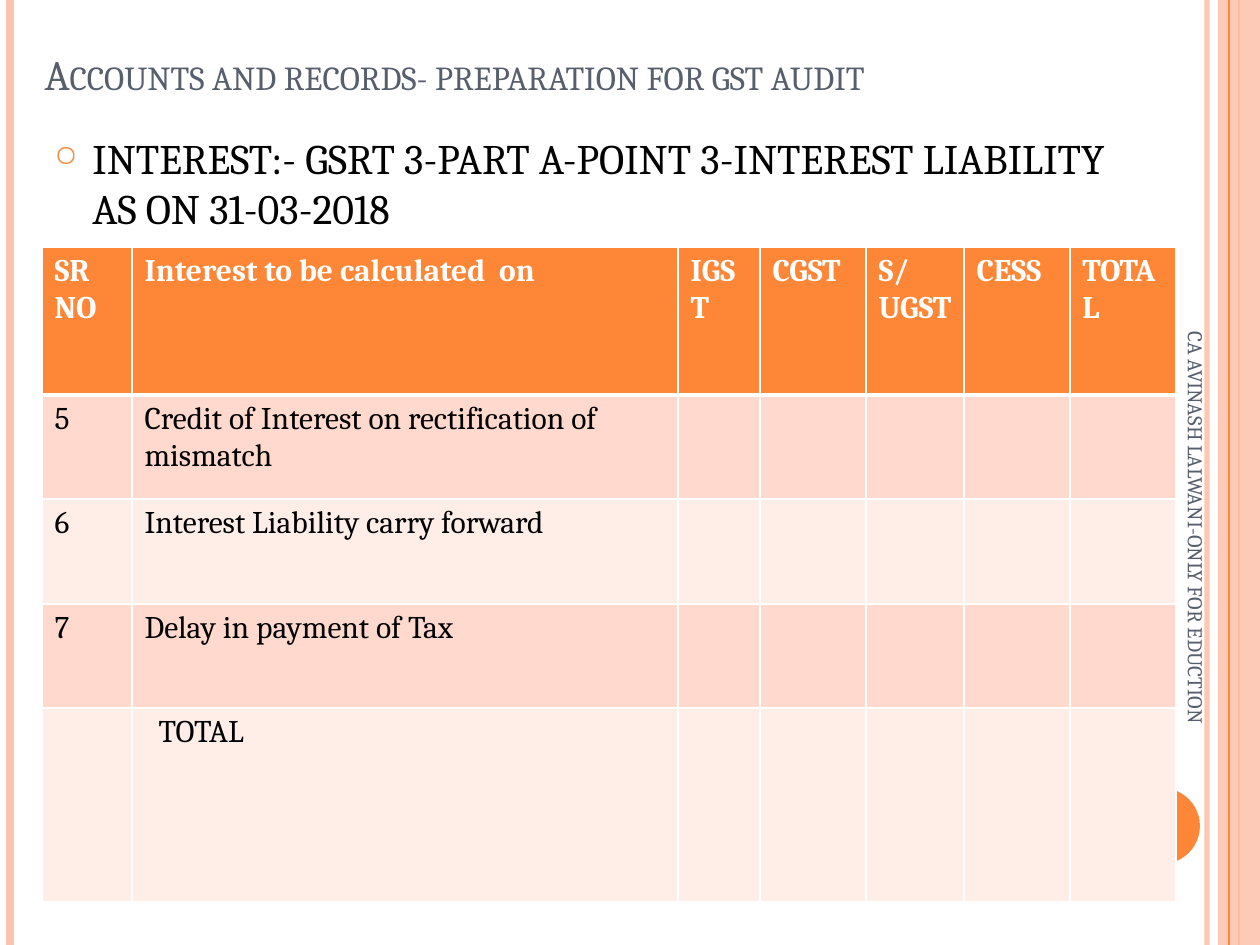
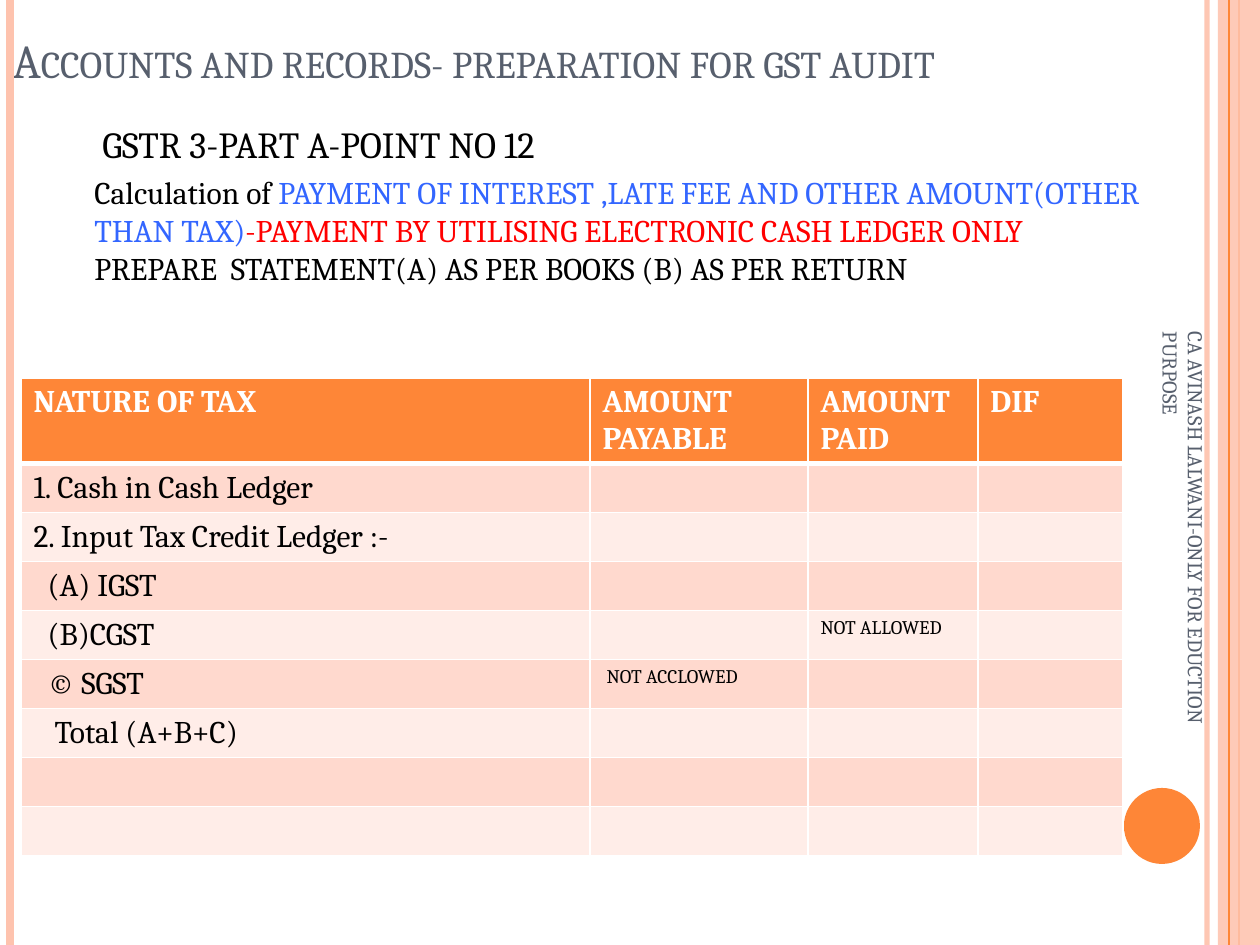
from dataclasses import dataclass

from lxml.etree import SubElement
from pptx import Presentation
from pptx.dml.color import RGBColor
from pptx.enum.shapes import MSO_CONNECTOR, MSO_SHAPE
from pptx.enum.text import MSO_ANCHOR, MSO_AUTO_SIZE, PP_ALIGN
from pptx.oxml.ns import qn
from pptx.util import Emu, Pt

PX_PER_INCH = 126
SLIDE_WIDTH, SLIDE_HEIGHT = 1260, 945


@dataclass(frozen=True)
class Theme:
    font: str = "Cambria"
    accent: str = "FE8637"
    peach: str = "FEC3AE"
    slate: str = "575F6D"
    white: str = "FFFFFF"
    black: str = "000000"
    blue: str = "3366FF"
    red: str = "FF0000"
    bands: tuple = ("FFD9CE", "FFEDE8")
    lead: int = 24
    heading: int = 21
    text: int = 18
    footer: int = 12
    note: int = 11


@dataclass(frozen=True)
class Entry:
    text: str = ""
    indent: int = 0
    size: int = Theme.text


THEME = Theme()
TITLE = "Accounts and records- preparation for gst audit"
FOOTER = "CA AVINASH LALWANI-ONLY FOR EDUCTION PURPOSE"


def px(length):
    return Emu(round(length * 914400 / PX_PER_INCH))


def box(*lengths):
    return [px(length) for length in lengths]


def apply(target, **values):
    for attribute, value in values.items():
        setattr(target, attribute, value)


def style(run, size, color, bold=False):
    apply(run.font, name=THEME.font, size=Pt(size), bold=bold)
    run.font.color.rgb = RGBColor.from_string(color)


def add_run(paragraph, text, size, color, bold=False):
    run = paragraph.add_run()
    run.text = text
    style(run, size, color, bold)
    return run


def set_alpha(element, percent):
    SubElement(next(element.iter(qn("a:srgbClr"))), qn("a:alpha"), val=str(percent * 1000))


def add_rule(slide, x, color, width, alpha=None):
    rule = slide.shapes.add_connector(
        MSO_CONNECTOR.STRAIGHT, *box(x, 0, x, SLIDE_HEIGHT))
    rule.line.color.rgb = RGBColor.from_string(color)
    rule.line.width = Pt(width)
    properties = rule._element.spPr
    if alpha:
        set_alpha(properties, alpha)
    SubElement(properties, qn("a:effectLst"))


def add_block(slide, kind, bounds, color, alpha=None):
    block = slide.shapes.add_shape(kind, *box(*bounds))
    block.shadow.inherit = False
    block.fill.solid()
    block.fill.fore_color.rgb = RGBColor.from_string(color)
    block.line.fill.background()
    if alpha:
        set_alpha(block._element.spPr, alpha)


def add_text(slide, bounds, **frame_format):
    holder = slide.shapes.add_textbox(*box(*bounds))
    apply(holder.text_frame, word_wrap=True, auto_size=MSO_AUTO_SIZE.NONE, **frame_format)
    return holder


def set_indent(paragraph, left, first=0):
    properties = paragraph._p.get_or_add_pPr()
    for name, length in {"marL": left, "indent": first}.items():
        properties.set(name, str(px(length)))


def add_bullet(paragraph, character, color, percent):
    properties = paragraph._p.get_or_add_pPr()
    SubElement(SubElement(properties, qn("a:buClr")), qn("a:srgbClr"), val=color)
    SubElement(properties, qn("a:buSzPct"), val=str(percent * 1000))
    SubElement(properties, qn("a:buChar"), char=character)


def set_title(slide, bounds, size):
    title = slide.shapes.title
    apply(title, **dict(zip(("left", "top", "width", "height"), box(*bounds))))
    apply(title.text_frame, word_wrap=True, auto_size=MSO_AUTO_SIZE.NONE,
          vertical_anchor=MSO_ANCHOR.BOTTOM)
    heading = title.text_frame.paragraphs[0]
    heading.alignment = PP_ALIGN.LEFT
    run = add_run(heading, TITLE, size, THEME.slate)
    run._r.get_or_add_rPr().set("cap", "small")


def add_framed_slide(deck, title_bounds, title_size):
    slide = deck.slides.add_slide(deck.slide_layouts[5])
    add_rule(slide, 1207, THEME.peach, 3, 93)
    add_rule(slide, 10, THEME.peach, 4.5)
    add_rule(slide, 1239, THEME.accent, 1.5)
    add_block(slide, MSO_SHAPE.RECTANGLE, (1218, 0, 42, SLIDE_HEIGHT), THEME.peach, 87)
    add_rule(slide, 1229, THEME.accent, 0.75)
    add_block(slide, MSO_SHAPE.OVAL, (1124, 788, 76, 76), THEME.accent)
    set_title(slide, title_bounds, title_size)
    footer = add_text(slide, (963, 515, 441, 50), vertical_anchor=MSO_ANCHOR.MIDDLE)
    footer.rotation = 90
    add_run(footer.text_frame.paragraphs[0], FOOTER, THEME.footer, THEME.slate)
    return slide


def set_borders(cell, widths):
    properties = cell._tc.get_or_add_tcPr()
    for side, width in widths.items():
        border = SubElement(properties, qn(f"a:ln{side}"), w=str(Pt(width)))
        SubElement(SubElement(border, qn("a:solidFill")), qn("a:srgbClr"), val=THEME.white)


def fill_cell(cell, entry, row):
    header = row == 0
    set_borders(cell, {"L": 1, "R": 1, "T": 3 if row == 1 else 1, "B": 3 if header else 1})
    cell.fill.solid()
    cell.fill.fore_color.rgb = RGBColor.from_string(
        THEME.accent if header else THEME.bands[(row - 1) % 2])
    cell.text = entry.text
    for paragraph in cell.text_frame.paragraphs:
        if entry.indent:
            set_indent(paragraph, entry.indent)
        for run in paragraph.runs:
            style(run, entry.size, THEME.white if header else THEME.black, header)
        if not entry.text:
            ending = SubElement(paragraph._p, qn("a:endParaRPr"), sz=str(entry.size * 100))
            SubElement(ending, qn("a:latin"), typeface=THEME.font)


def add_grid(slide, left, top, widths, heights, rows):
    frame = slide.shapes.add_table(
        len(heights), len(widths), *box(left, top, sum(widths), sum(heights)))
    grid = frame.table
    for column, width in zip(grid.columns, widths):
        column.width = px(width)
    for line, height in zip(grid.rows, heights):
        line.height = px(height)
    for r in range(len(heights)):
        for c in range(len(widths)):
            entry = rows[r][c] if c < len(rows[r]) else Entry()
            fill_cell(grid.cell(r, c), entry if isinstance(entry, Entry) else Entry(entry), r)


def build_interest_slide(deck):
    slide = add_framed_slide(deck, (32, 38, 1166, 67), THEME.lead)
    point = add_text(slide, (42, 126, 1102, 766)).text_frame.paragraphs[0]
    point.space_before = Pt(6)
    set_indent(point, 38, -38)
    add_bullet(point, "○", THEME.accent, 70)
    add_run(point, "INTEREST:- GSRT 3-PART A-POINT 3-INTEREST LIABILITY AS ON 31-03-2018",
            THEME.lead, THEME.black)
    add_grid(slide, 42, 247, [90, 546, 82, 106, 98, 106, 106], [148, 104, 105, 104, 194], [
        ["SR\nNO", "Interest to be calculated  on", "IGST", "CGST", "S/UGST", "CESS", "TOTAL"],
        ["5", "Credit of Interest on rectification of mismatch"],
        ["6", "Interest Liability carry forward"],
        ["7", "Delay in payment of Tax"],
        ["", Entry("TOTAL", 14)],
    ])


def build_payment_slide(deck):
    slide = add_framed_slide(deck, (0, 0, 1228, 94), 27)
    body = add_text(slide, (32, 116, 1144, 809)).text_frame
    reference, calculation = body.paragraphs[0], body.add_paragraph()
    for paragraph, left in ((reference, 58), (calculation, 50)):
        paragraph.space_before = Pt(4)
        set_indent(paragraph, left)
    add_run(reference, "GSTR 3-PART A-POINT NO 12", THEME.heading, THEME.black)
    for text, color in (
        ("Calculation of ", THEME.black),
        ("PAYMENT OF INTEREST ,LATE FEE AND OTHER AMOUNT(OTHER THAN TAX)", THEME.blue),
        ("-PAYMENT BY UTILISING ELECTRONIC CASH LEDGER ONLY", THEME.red),
    ):
        add_run(calculation, text, THEME.text, color)
    calculation.add_line_break()
    add_run(calculation, "PREPARE  STATEMENT(A) AS PER BOOKS (B) AS PER RETURN",
            THEME.text, THEME.black)
    add_grid(slide, 21, 378, [569, 218, 170, 145], [84] + [49] * 8, [
        ["NATURE OF TAX", "AMOUNT PAYABLE", "AMOUNT PAID", "DIF"],
        ["1. Cash in Cash Ledger"],
        ["2. Input Tax Credit Ledger :-"],
        [Entry("(A) IGST", 14)],
        [Entry("(B)CGST", 14), "", Entry("NOT ALLOWED", size=THEME.note)],
        [Entry("© SGST", 14), Entry("NOT ACCLOWED", 4, THEME.note)],
        [Entry("Total (A+B+C)", 21)],
        [],
        [],
    ])


def main():
    deck = Presentation()
    apply(deck, slide_width=px(SLIDE_WIDTH), slide_height=px(SLIDE_HEIGHT))
    build_interest_slide(deck)
    build_payment_slide(deck)
    deck.save("out.pptx")


if __name__ == "__main__":
    main()
